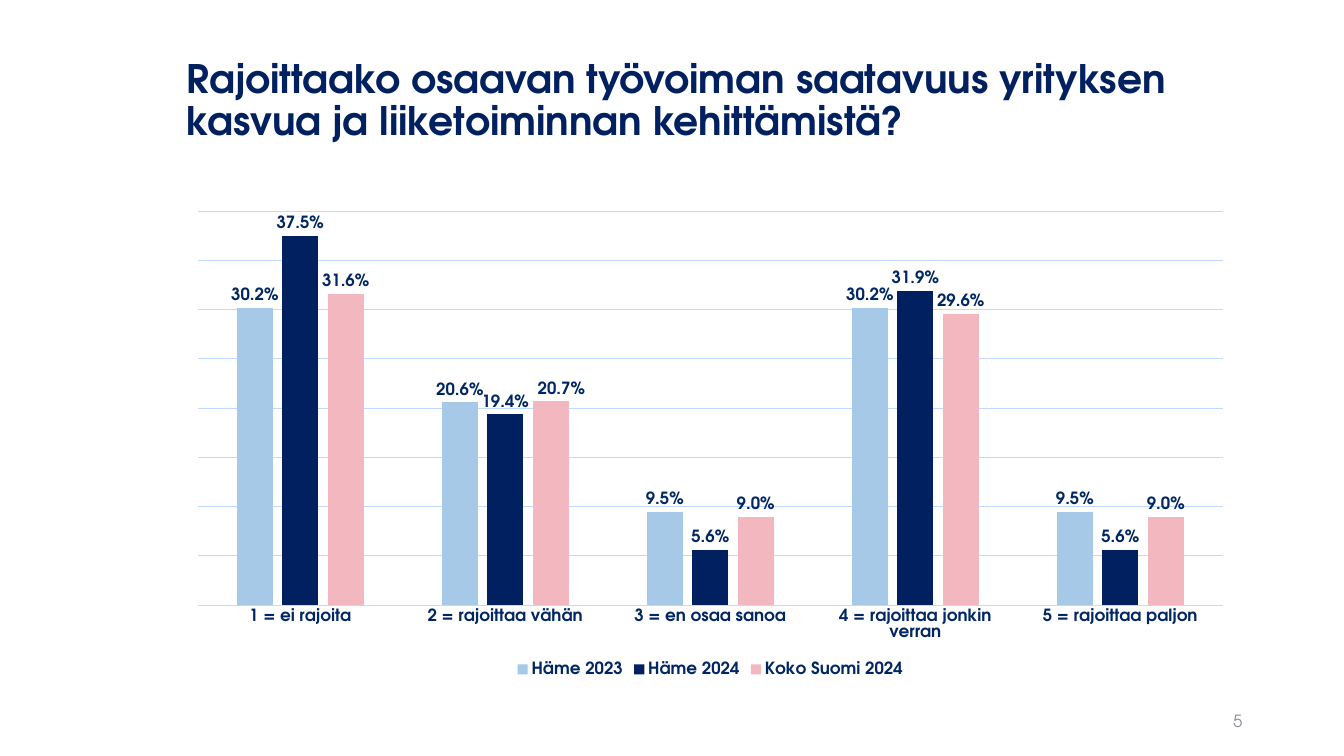
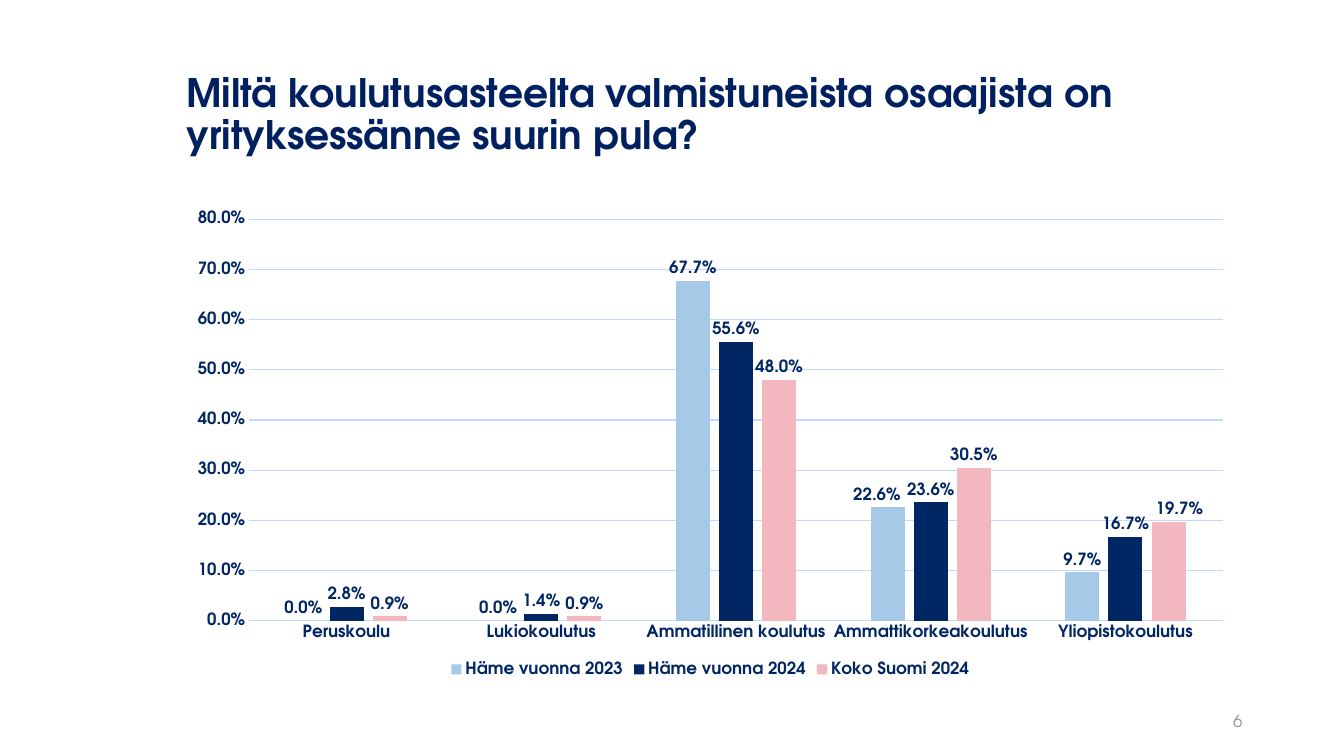
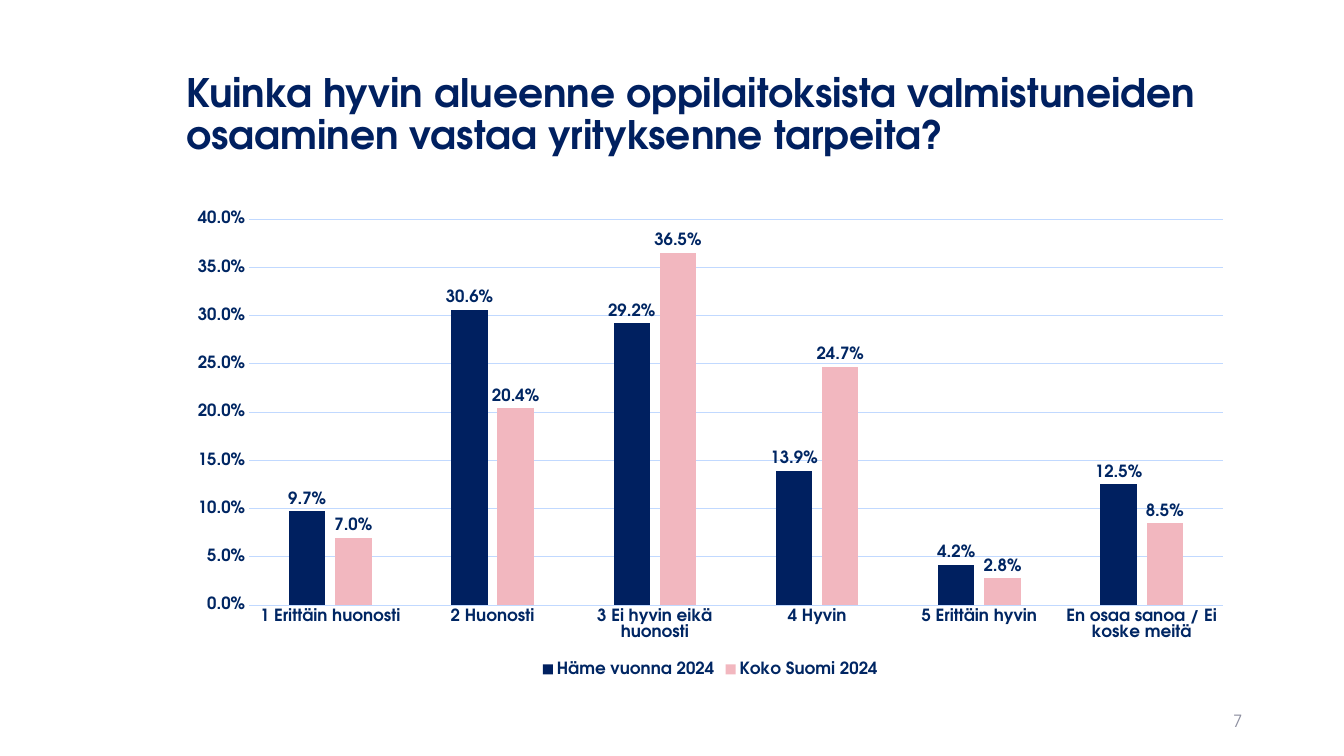
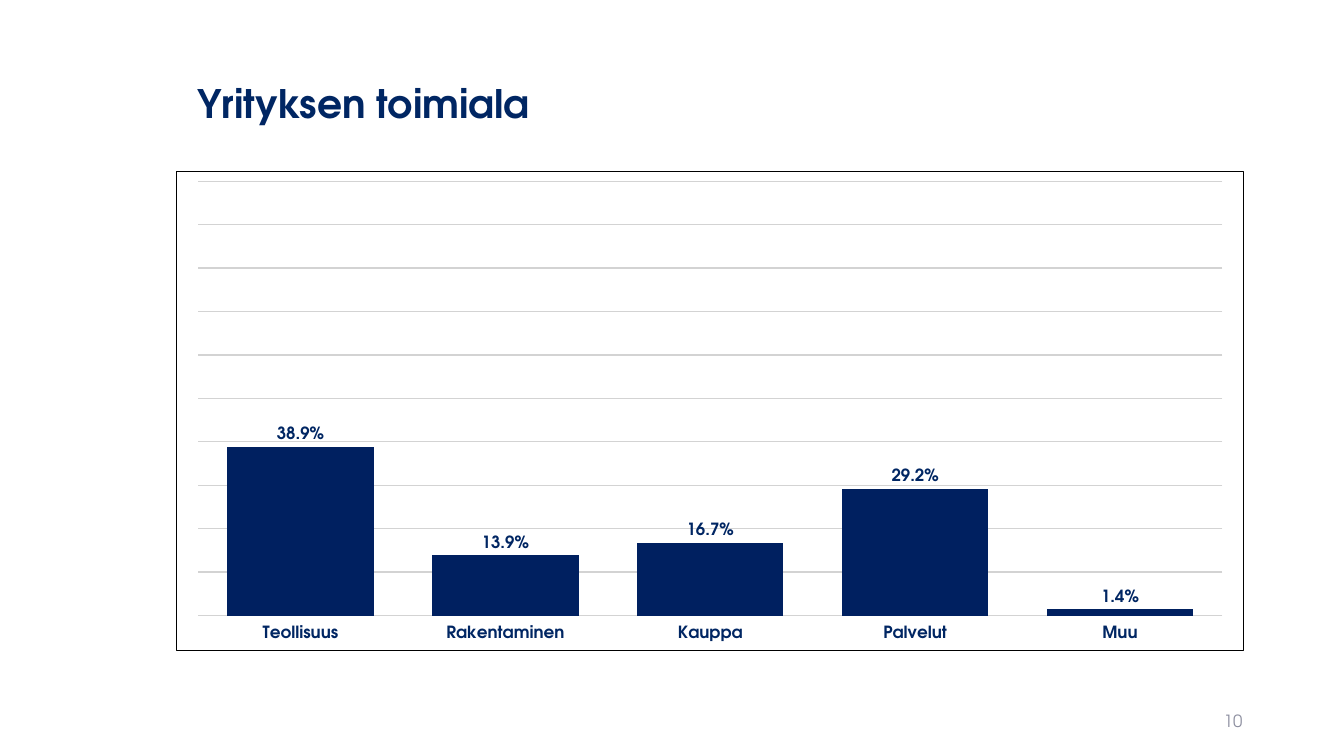
from pptx import Presentation
from pptx.chart.data import CategoryChartData
from pptx.dml.color import RGBColor
from pptx.enum.chart import XL_CHART_TYPE, XL_LABEL_POSITION, XL_LEGEND_POSITION, XL_TICK_MARK
from pptx.enum.text import MSO_ANCHOR, PP_ALIGN
from pptx.oxml import parse_xml
from pptx.oxml.ns import nsdecls, qn
from pptx.util import Inches, Pt

COLUMNS = XL_CHART_TYPE.COLUMN_CLUSTERED
OUTSIDE_END = XL_LABEL_POSITION.OUTSIDE_END
BOTTOM = XL_LEGEND_POSITION.BOTTOM
TICK_NONE, TICK_OUT = XL_TICK_MARK.NONE, XL_TICK_MARK.OUTSIDE
LEFT, RIGHT = PP_ALIGN.LEFT, PP_ALIGN.RIGHT
MIDDLE = MSO_ANCHOR.MIDDLE


class Theme:
    font = "TeX Gyre Adventor"
    navy = RGBColor.from_string("002060")
    ink = RGBColor.from_string("002663")
    sky = RGBColor.from_string("A5C9E7")
    pink = RGBColor.from_string("F2B7BF")
    grid = RGBColor.from_string("C1D9FF")
    grey_grid = RGBColor.from_string("D3D3D3")
    page_grey = RGBColor.from_string("8C8E9F")
    title_size = Pt(28)
    body_size = Pt(12)
    left = Inches(1.75)
    width = Inches(10.59)
    title_height = Inches(1.3)
    chart_height = Inches(4.76)
    percent = "0.0%"


def style_font(font, size, color, bold):
    font.name = Theme.font
    font.size = size
    font.bold = bold
    font.color.rgb = color


def shape_props(fill, line):
    return parse_xml(f"<c:spPr {nsdecls('c', 'a')}>{fill}{line}</c:spPr>")


NO_FILL = "<a:noFill/>"
NO_LINE = "<a:ln><a:noFill/></a:ln>"
WHITE_FILL = '<a:solidFill><a:srgbClr val="FFFFFF"/></a:solidFill>'
BLACK_LINE = '<a:ln w="6350"><a:solidFill><a:srgbClr val="000000"/></a:solidFill></a:ln>'

SLIDES = [
    {
        "title": "Rajoittaako osaavan työvoiman saatavuus yrityksen kasvua ja liiketoiminnan kehittämistä?",
        "page": "5",
        "title_top": 0.36,
        "hide_values": True,
        "cats": ["1 = ei rajoita", "2 = rajoittaa vähän", "3 = en osaa sanoa",
                 "4 = rajoittaa jonkin verran", "5 = rajoittaa paljon"],
        "series": [
            ("Häme 2023", Theme.sky, [0.302, 0.206, 0.095, 0.302, 0.095]),
            ("Häme 2024", Theme.navy, [0.375, 0.194, 0.056, 0.319, 0.056]),
            ("Koko Suomi 2024", Theme.pink, [0.316, 0.207, 0.09, 0.296, 0.09]),
        ],
        "label_shifts": [(2, 1, 0.01)],
    },
    {
        "title": "Miltä koulutusasteelta valmistuneista osaajista on yrityksessänne suurin pula?",
        "page": "6",
        "cats": ["Peruskoulu", "Lukiokoulutus", "Ammatillinen koulutus",
                 "Ammattikorkeakoulutus", "Yliopistokoulutus"],
        "series": [
            ("Häme vuonna 2023", Theme.sky, [0, 0, 0.677, 0.226, 0.097]),
            ("Häme vuonna 2024", Theme.ink, [0.028, 0.014, 0.556, 0.236, 0.167]),
            ("Koko Suomi 2024", Theme.pink, [0.009, 0.009, 0.48, 0.305, 0.197]),
        ],
        "label_shifts": [(0, 3, -0.01), (2, 4, 0.01)],
    },
    {
        "title": "Kuinka hyvin alueenne oppilaitoksista valmistuneiden osaaminen vastaa yrityksenne tarpeita?",
        "page": "7",
        "cats": ["1 Erittäin huonosti", "2 Huonosti", "3 Ei hyvin eikä huonosti",
                 "4 Hyvin", "5 Erittäin hyvin", "En osaa sanoa / Ei koske meitä"],
        "series": [
            ("Häme vuonna 2024", Theme.navy, [0.097, 0.306, 0.292, 0.139, 0.042, 0.125]),
            ("Koko Suomi 2024", Theme.pink, [0.07, 0.204, 0.365, 0.247, 0.028, 0.085]),
        ],
    },
    {
        "title": "Yrityksen toimiala",
        "page": "10",
        "title_top": 0.4,
        "title_inset": 0.21,
        "title_color": Theme.ink,
        "chart_top": 1.7,
        "hide_values": True,
        "framed": True,
        "cats": ["Teollisuus", "Rakentaminen", "Kauppa", "Palvelut", "Muu"],
        "series": [("Series 1", Theme.navy, [0.389, 0.139, 0.167, 0.292, 0.014])],
    },
]

prs = Presentation()
prs.slide_width = Inches(13.33)
prs.slide_height = Inches(7.5)

for page in SLIDES:
    s = prs.slides.add_slide(prs.slide_layouts[5])
    framed = page.get("framed", False)

    title = s.shapes.title
    title.left, title.top = Theme.left, Inches(page.get("title_top", 0.5))
    title.width, title.height = Theme.width, Theme.title_height
    tf = title.text_frame
    tf.text = page["title"]
    tf.word_wrap = True
    tf.vertical_anchor = MIDDLE
    tf.margin_left = Inches(page.get("title_inset", 0.1))
    p = tf.paragraphs[0]
    p.alignment = LEFT
    p.line_spacing = 0.9
    style_font(p.runs[0].font, Theme.title_size, page.get("title_color", Theme.navy), True)

    sp = s.shapes.add_textbox(Inches(9.42), Inches(6.95), Inches(3), Inches(0.4))
    tf = sp.text_frame
    tf.text = page["page"]
    tf.word_wrap = True
    tf.vertical_anchor = MIDDLE
    p = tf.paragraphs[0]
    p.alignment = RIGHT
    style_font(p.runs[0].font, Theme.body_size, Theme.page_grey, False)

    data = CategoryChartData(number_format=Theme.percent)
    data.categories = page["cats"]
    for name, color, values in page["series"]:
        data.add_series(name, values)
    chart = s.shapes.add_chart(COLUMNS, Theme.left, Inches(page.get("chart_top", 2)),
                               Theme.width, Theme.chart_height, data).chart
    chart.has_title = False
    style_font(chart.font, Theme.body_size, Theme.ink, True)
    chart.has_legend = not framed
    if chart.has_legend:
        chart.legend.position = BOTTOM
        chart.legend.include_in_layout = False
        style_font(chart.legend.font, Theme.body_size, Theme.ink, True)

    chart_node = chart.element.find(qn("c:chart"))
    chart_node.addnext(shape_props(NO_FILL, BLACK_LINE if framed else NO_LINE))
    if framed:
        chart_node.find(qn("c:plotArea")).append(shape_props(WHITE_FILL, NO_LINE))

    cat_axis = chart.category_axis
    cat_axis.major_tick_mark = TICK_OUT if framed else TICK_NONE
    if framed:
        cat_axis.format.line.fill.background()
    else:
        cat_axis.format.line.color.rgb = Theme.grid
        cat_axis.format.line.width = Pt(0.75)

    val_axis = chart.value_axis
    val_axis.visible = not page.get("hide_values", False)
    val_axis.major_tick_mark = TICK_NONE
    val_axis.format.line.fill.background()
    val_axis.tick_labels.number_format = Theme.percent
    val_axis.tick_labels.number_format_is_linked = False
    val_axis.has_major_gridlines = True
    grid_line = val_axis.major_gridlines.format.line
    grid_line.color.rgb = Theme.grey_grid if framed else Theme.grid
    grid_line.width = Pt(1 if framed else 0.75)
    if framed:
        val_axis.minimum_scale, val_axis.maximum_scale = 0, 1

    for axis in (cat_axis, val_axis):
        style_font(axis.tick_labels.font, Theme.body_size, Theme.ink, True)

    plot = chart.plots[0]
    plot.vary_by_categories = False
    plot.gap_width, plot.overlap = (40, -2) if framed else (219, -27)

    for series, (name, color, values) in zip(plot.series, page["series"]):
        series.format.fill.solid()
        series.format.fill.fore_color.rgb = color
        labels = series.data_labels
        labels.show_value = True
        labels.number_format = Theme.percent
        labels.number_format_is_linked = False
        labels.position = OUTSIDE_END
        style_font(labels.font, Theme.body_size, Theme.ink, True)

    series_nodes = list(chart.element.iter(qn("c:ser")))
    for series_index, point_index, shift in page.get("label_shifts", []):
        label = plot.series[series_index].points[point_index].data_label
        label.position = OUTSIDE_END
        style_font(label.font, Theme.body_size, Theme.ink, True)
        label_node = next(series_nodes[series_index].iter(qn("c:dLbl")))
        label_node.find(qn("c:idx")).addnext(parse_xml(
            f"<c:layout {nsdecls('c')}><c:manualLayout>"
            f'<c:x val="{shift}"/><c:y val="0"/></c:manualLayout></c:layout>'))

prs.save("out.pptx")
